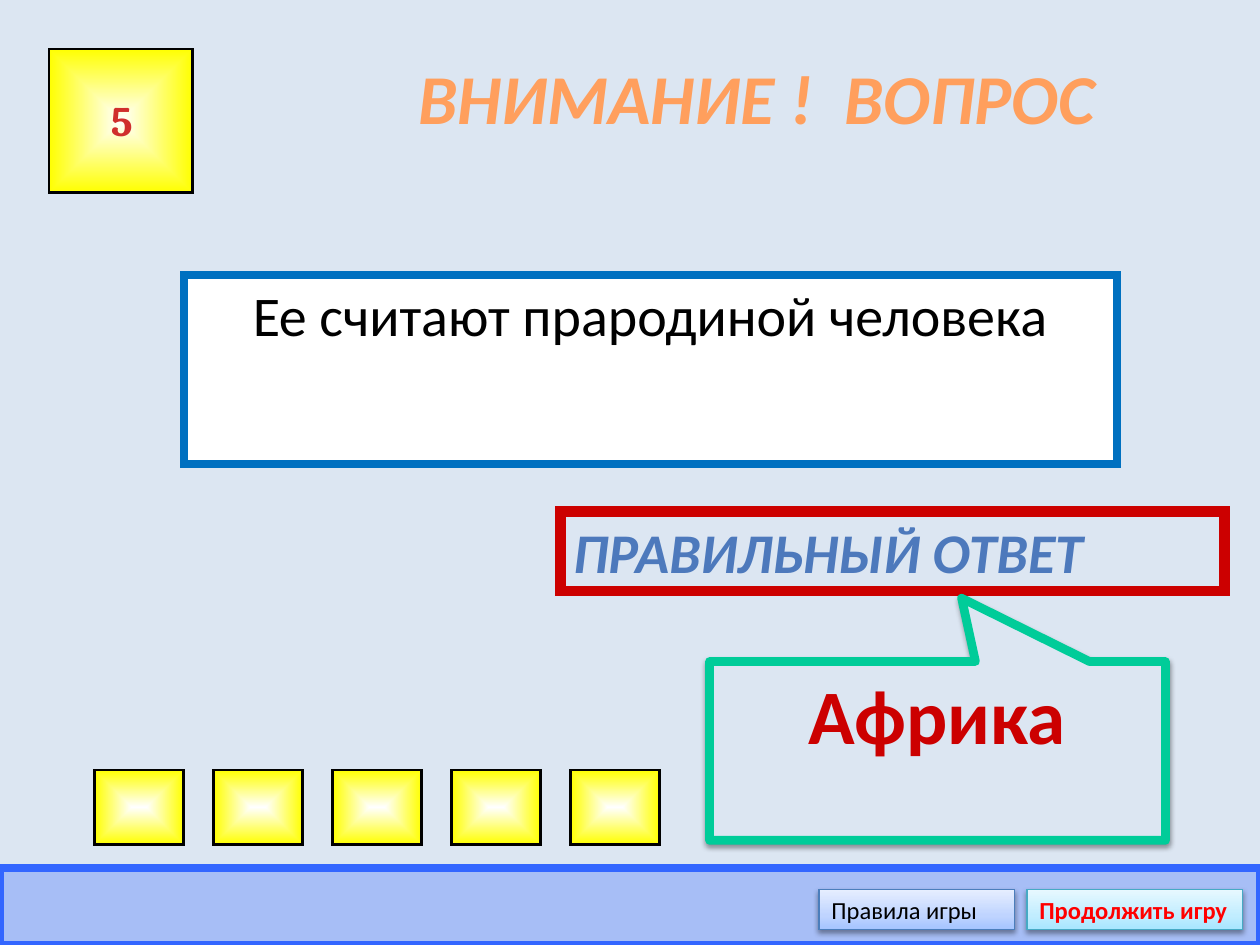
from lxml import etree
from pptx import Presentation
from pptx.dml.color import RGBColor
from pptx.enum import shapes, text
from pptx.oxml.ns import qn
from pptx.util import Pt

RECT = shapes.MSO_SHAPE.RECTANGLE
TILE = shapes.MSO_SHAPE.ACTION_BUTTON_CUSTOM
CALLOUT = shapes.MSO_SHAPE.RECTANGULAR_CALLOUT
LEFT, CENTER = text.PP_ALIGN.LEFT, text.PP_ALIGN.CENTER
TOP, MIDDLE = text.MSO_ANCHOR.TOP, text.MSO_ANCHOR.MIDDLE

BACKGROUND = "DCE6F2"
ORANGE = [(0, "FFA367"), (25, "FF9F5D"), (50, "F38E3A"), (75, "FF9F5D"), (100, "FFA367")]
RED = [(0, "FC7C7A"), (75, "D02F2C"), (100, "C70500")]
BLUE = [(0, "7494C9"), (49, "4D79BC"), (50, "346AAA"), (92, "325F94"), (100, "315D91")]
YELLOW = [(0, "FFFFFF"), (100, "FFFF00")]
RULES = [(0, "A4C4FF"), (35, "BFD4FF"), (100, "E6EEFF")]
CONTINUE = [(0, "A7E6FF"), (35, "C1EDFF"), (100, "E7F8FF")]


def rgb(value):
    return RGBColor.from_string(value)


def add_xml(parent, tag, **attrs):
    return etree.SubElement(parent, qn(tag), {k: str(v) for k, v in attrs.items()})


def add_color(parent, color, alpha=None):
    node = add_xml(parent, "a:srgbClr", val=color)
    if alpha is not None:
        add_xml(node, "a:alpha", val=alpha * 1000)


def paint(fill, owner, color, angle=None):
    """Fill with a hex colour or with gradient stops; no angle means from the centre out."""
    if isinstance(color, str):
        fill.solid()
        fill.fore_color.rgb = rgb(color)
        return
    fill.gradient()
    grad = next(owner.iter(qn("a:gradFill")))
    for child in list(grad):
        grad.remove(child)
    stops = add_xml(grad, "a:gsLst")
    for pos, value in color:
        add_color(add_xml(stops, "a:gs", pos=pos * 1000), value)
    if angle is None:
        center = add_xml(grad, "a:path", path="rect")
        add_xml(center, "a:fillToRect", l=50000, t=50000, r=50000, b=50000)
    else:
        add_xml(grad, "a:lin", ang=angle * 60000, scaled=0)


def add_box(slide, kind, at, fill, line, width, angle=None, miter=True):
    sp = slide.shapes.add_shape(kind, *(Pt(v) for v in at))
    sp.shadow.inherit = False
    paint(sp.fill, sp._element, fill, angle)
    sp.line.color.rgb = rgb(line)
    sp.line.width = Pt(width)
    if miter:
        add_xml(next(sp._element.iter(qn("a:ln"))), "a:miter", lim=800000)
    return sp


def add_shadow(sp):
    effects = next(sp._element.iter(qn("a:effectLst")))
    shadow = add_xml(effects, "a:outerShdw", blurRad=Pt(3.1), dist=Pt(1.6),
                     dir=90 * 60000, rotWithShape=0)
    add_color(shadow, "000000", 38)


def write(sp, words, size, color, align=LEFT, anchor=MIDDLE, font="Calibri",
          bold=False, italic=False, wrap=True):
    tf = sp.text_frame
    tf.word_wrap = wrap
    tf.vertical_anchor = anchor
    p = tf.paragraphs[0]
    p.alignment = align
    r = p.add_run()
    r.text = words
    r.font.name, r.font.size = font, Pt(size)
    r.font.bold, r.font.italic = bold, italic
    paint(r.font.fill, r._r, color, 90)


def add_label(slide, at, words, size, color, **style):
    sp = slide.shapes.add_textbox(*(Pt(v) for v in at))
    write(sp, words, size, color, **style)


def add_tile(slide, at):
    add_box(slide, TILE, at, YELLOW, "000000", 1.5)


def add_button(slide, left, width, words, fill, line, color, bold=False):
    sp = add_box(slide, RECT, (left, 508.3, width, 23), fill, line, 0.75, 270)
    add_shadow(sp)
    write(sp, words, 14, color, bold=bold)


def add_question(slide):
    add_label(slide, (172.8, 21.6, 519, 67), "ВНИМАНИЕ !  ВОПРОС", 40, ORANGE,
              align=CENTER, bold=True, italic=True)
    sp = add_box(slide, RECT, (105, 157, 533.5, 108), "FFFFFF", "0070C0", 4.5)
    write(sp, "Ее считают прародиной человека", 32, "000000", CENTER, TOP)
    sp.text_frame.paragraphs[0].space_before = Pt(2)
    add_tile(slide, (28, 28, 82, 82))
    add_label(slide, (56.2, 50.4, 22.3, 45.4), "5", 24, RED, anchor=TOP,
              font="Cambria", bold=True, wrap=False)


def add_answer(slide):
    sp = add_box(slide, RECT, (320.4, 292.3, 379.5, 45.4), BACKGROUND, "CC0000", 6)
    write(sp, "ПРАВИЛЬНЫЙ ОТВЕТ", 32, BLUE, bold=True, italic=True)
    sp = add_box(slide, CALLOUT, (405.4, 378, 260.6, 102.2), BACKGROUND, "00CC99", 5,
                 miter=False)
    sp.adjustments[0], sp.adjustments[1] = 0.053, -0.854
    add_shadow(sp)
    write(sp, "Африка", 44, "CC0000", CENTER, TOP, bold=True)


def add_navigation(slide):
    bar = add_box(slide, RECT, (0, 496, 720, 44), "3366FF", "3366FF", 4.5)
    add_xml(next(bar._element.iter(qn("a:srgbClr"))), "a:alpha", val=31000)
    add_button(slide, 468, 111.6, "Правила игры", RULES, "4B7EBC", "000000")
    add_button(slide, 586.8, 123.1, "Продолжить игру", CONTINUE, "46AAC5", "FF0000", True)


def main():
    prs = Presentation()
    prs.slide_width, prs.slide_height = Pt(720), Pt(540)
    slide = prs.slides.add_slide(prs.slide_layouts[6])
    paint(slide.background.fill, slide._element, BACKGROUND)
    add_question(slide)
    for i in range(5):
        add_tile(slide, (54 + 68 * i, 440, 51, 42.5))
    add_answer(slide)
    add_navigation(slide)
    prs.save("out.pptx")


if __name__ == "__main__":
    main()
